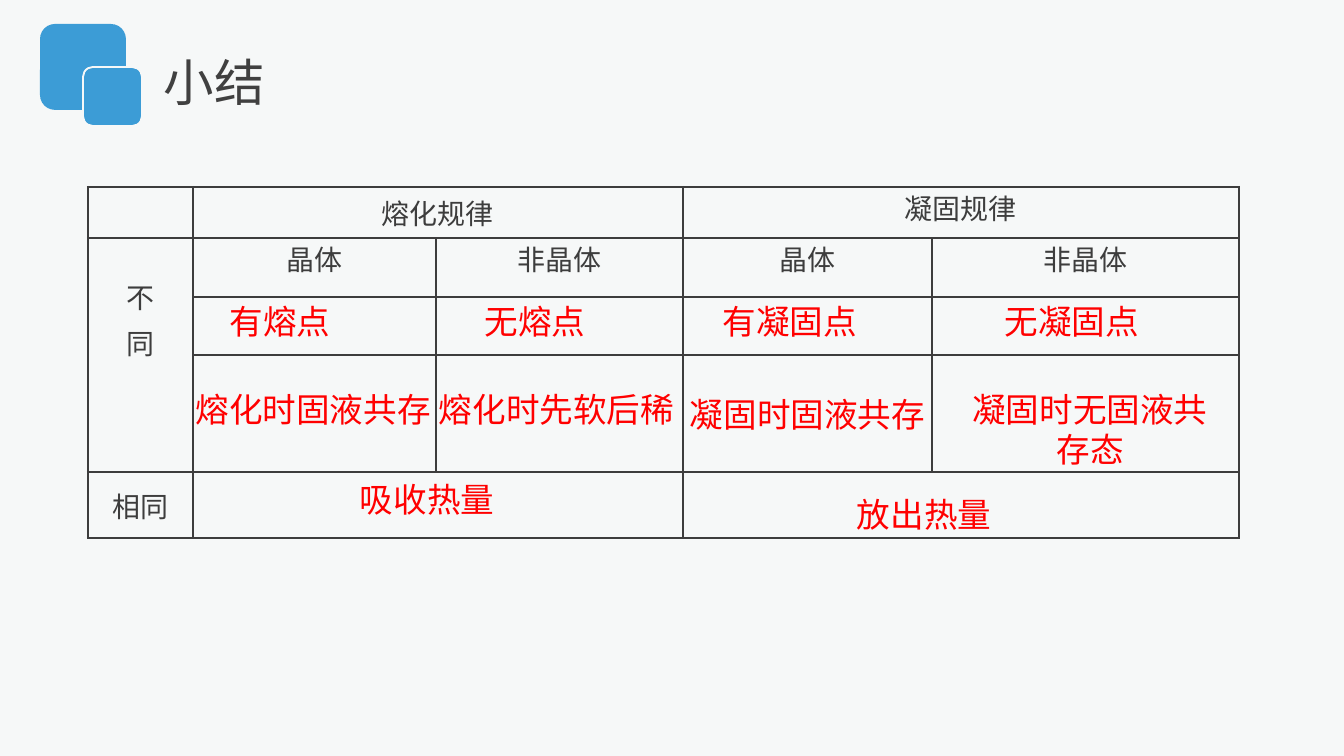
from lxml import etree
from pptx import Presentation
from pptx.dml.color import RGBColor
from pptx.enum.shapes import MSO_SHAPE
from pptx.enum.text import MSO_ANCHOR, PP_ALIGN
from pptx.oxml.ns import qn
from pptx.util import Emu, Pt

EMU_PER_PX = 914400 / 134.4
DARK, RED, BLUE, PALE = "3D3D3D", "FF0000", "3C9CD6", "F6F8F8"
COLUMNS = [105, 243, 247, 249, 307]
ROWS = [51, 59, 58, 117, 66]
MERGES = [((0, 1), (0, 2)), ((0, 3), (0, 4)), ((1, 0), (3, 0)),
          ((4, 1), (4, 2)), ((4, 3), (4, 4))]
LABELS = {
    (0, 1): "熔化规律", (0, 3): "凝固规律", (1, 0): "不\n同",
    (1, 1): "晶体", (1, 2): "非晶体", (1, 3): "晶体", (1, 4): "非晶体",
    (4, 0): "相同",
}
CENTERED_CELLS = [(0, 1), (4, 0)]
ANSWERS = [
    ("有熔点", 219, 296, 122, False, PP_ALIGN.CENTER),
    ("无熔点", 474, 296, 122, False, PP_ALIGN.CENTER),
    ("有凝固点", 712, 296, 156, False, PP_ALIGN.CENTER),
    ("无凝固点", 994, 296, 156, False, PP_ALIGN.CENTER),
    ("熔化时固液共存", 172, 384, 282, True, PP_ALIGN.CENTER),
    ("熔化时先软后稀", 412, 384, 289, True, PP_ALIGN.CENTER),
    ("凝固时固液共存", 659, 389, 297, True, PP_ALIGN.CENTER),
    ("凝固时无固液共存态", 949, 384, 282, True, PP_ALIGN.CENTER),
    ("吸收热量", 351, 474, 156, False, PP_ALIGN.LEFT),
    ("放出热量", 848, 489, 156, False, PP_ALIGN.LEFT),
]


def px(value):
    return Emu(round(value * EMU_PER_PX))


def color(value):
    return RGBColor.from_string(value)


def style_paragraph(para, size, font_color, align):
    para.alignment = align
    for span in para.runs:
        span.font.name = "Arial"
        span.font.size = Pt(size)
        span.font.color.rgb = color(font_color)


def add_square(page, left, top, side, line_color):
    square = page.shapes.add_shape(
        MSO_SHAPE.ROUNDED_RECTANGLE, px(left), px(top), px(side), px(side))
    square.shadow.inherit = False
    square.fill.solid()
    square.fill.fore_color.rgb = color(BLUE)
    square.line.color.rgb = color(line_color)
    square.line.width = Pt(1)


def add_text(page, text, left, top, width, height, size, font_color, wrap, align):
    box = page.shapes.add_textbox(px(left), px(top), px(width), px(height))
    frame = box.text_frame
    frame.word_wrap = wrap
    frame.margin_left = frame.margin_right = px(9)
    frame.margin_top = frame.margin_bottom = px(5)
    frame.text = text
    style_paragraph(frame.paragraphs[0], size, font_color, align)


def set_borders(cell, row, column):
    outer = {
        "a:lnL": column == 0,
        "a:lnR": column + cell.span_width == len(COLUMNS),
        "a:lnT": row == 0,
        "a:lnB": row + cell.span_height == len(ROWS),
    }
    properties = cell._tc.get_or_add_tcPr()
    for index, (tag, is_outer) in enumerate(outer.items()):
        line = etree.Element(qn(tag), w=str(Pt(1.5 if is_outer else 1)))
        fill = etree.SubElement(line, qn("a:solidFill"))
        etree.SubElement(fill, qn("a:srgbClr"), val=DARK)
        properties.insert(index, line)


def fill_cell(cell, position):
    cell.fill.background()
    cell.margin_left = cell.margin_right = cell.margin_bottom = 0
    cell.margin_top = px(38) if cell.span_height > 1 else 0
    if position in CENTERED_CELLS:
        cell.vertical_anchor = MSO_ANCHOR.MIDDLE
    if position in LABELS:
        cell.text_frame.text = LABELS[position]
        for index, para in enumerate(cell.text_frame.paragraphs):
            style_paragraph(para, 15, DARK, PP_ALIGN.CENTER)
            if index:
                para.space_before = Pt(3)


def add_summary_table(page):
    table = page.shapes.add_table(
        len(ROWS), len(COLUMNS), px(88), px(187),
        px(sum(COLUMNS)), px(sum(ROWS))).table
    table.first_row = table.horz_banding = False
    for column, width in zip(table.columns, COLUMNS):
        column.width = px(width)
    for row, height in zip(table.rows, ROWS):
        row.height = px(height)
    for first, last in MERGES:
        table.cell(*first).merge(table.cell(*last))
    for row in range(len(ROWS)):
        for column in range(len(COLUMNS)):
            cell = table.cell(row, column)
            fill_cell(cell, (row, column))
            set_borders(cell, row, column)


def main():
    deck = Presentation()
    deck.slide_width, deck.slide_height = px(1344), px(756)
    page = deck.slides.add_slide(deck.slide_layouts[6])
    page.background.fill.solid()
    page.background.fill.fore_color.rgb = color(PALE)
    add_square(page, 41, 25, 84, BLUE)
    add_square(page, 83, 67, 59, PALE)
    add_summary_table(page)
    for text, left, top, width, wrap, align in ANSWERS:
        height = 91 if len(text) > 7 else 51
        add_text(page, text, left, top, width, height, 18, RED, wrap, align)
    add_text(page, "小结", 155, 46, 239, 71, 27, "404040", True, PP_ALIGN.LEFT)
    deck.save("out.pptx")


if __name__ == "__main__":
    main()
